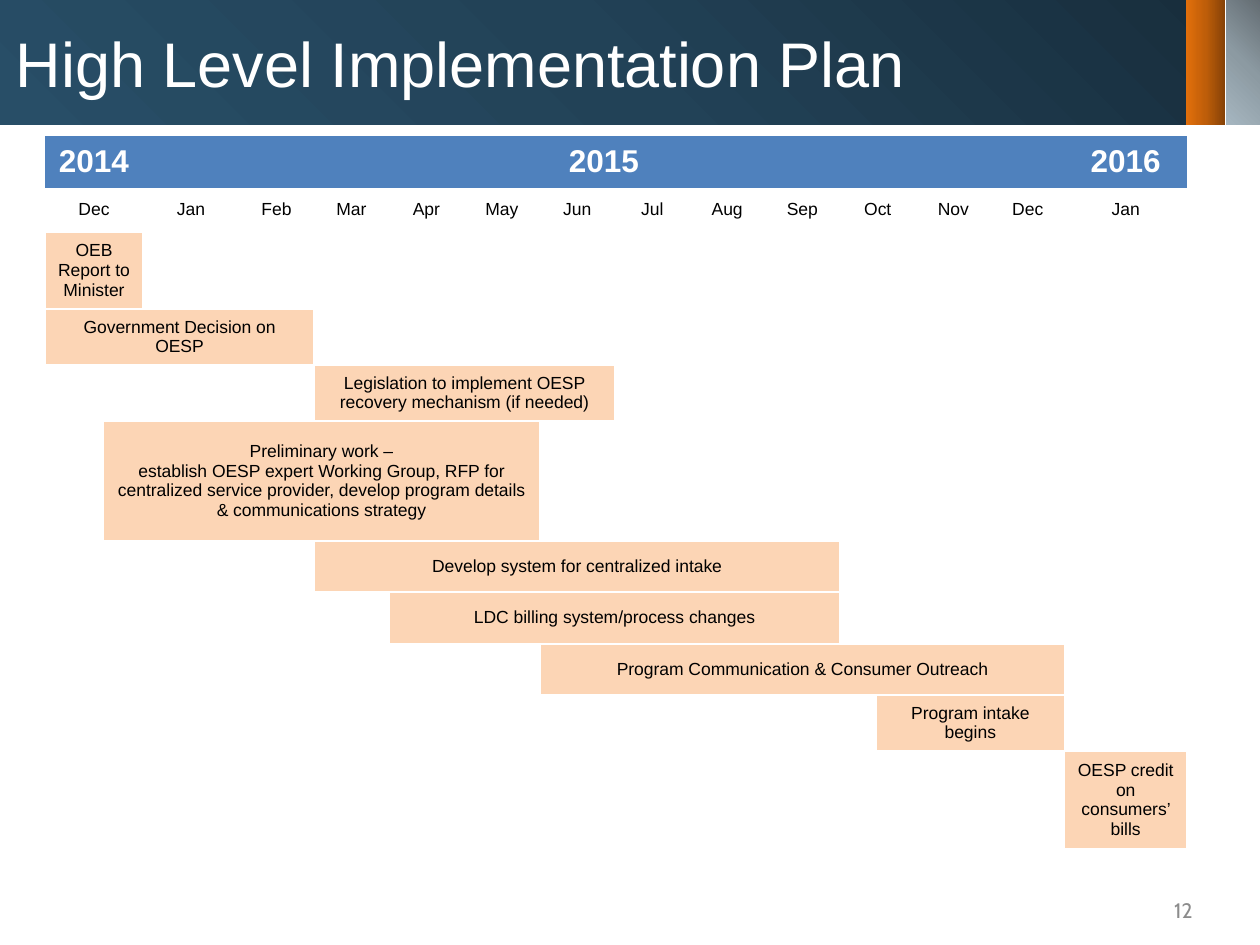
import dataclasses
import typing

import lxml.etree
import pptx
import pptx.dml.color
import pptx.enum.shapes
import pptx.enum.text
import pptx.oxml
import pptx.oxml.ns
import pptx.util

PX = 914400 / 126
ALIGN = pptx.enum.text.PP_ALIGN
MIDDLE = pptx.enum.text.MSO_ANCHOR.MIDDLE
NO_STYLE = "{2D5ABB26-0587-4C30-8999-92F81FD0307C}"
WHITE, BLACK, BLUE, PEACH, GREY = "FFFFFF", "000000", "4F81BD", "FCD5B5", "8C8C8C"

COLUMNS = [58, 40, 96, 75, 75, 75, 76, 75, 75, 75, 45, 29, 36, 40, 75, 74, 122]
ROWS = [52, 44, 77, 56, 56, 120, 51, 52, 51, 56, 98]

TITLE_FORMAT = {"size": pptx.util.Pt(36), "name": "Arial"}
YEAR_FORMAT = {"size": pptx.util.Pt(18), "name": "Arial", "bold": True}
LABEL_FORMAT = {"size": pptx.util.Pt(10), "name": "Arial", "bold": False}
NUMBER_FORMAT = {"size": pptx.util.Pt(12), "name": "Cabin"}


@dataclasses.dataclass
class Band:
    box: tuple[int, int, int, int]
    rotation: int
    angle: int
    colors: tuple[str, str, str]


@dataclasses.dataclass
class Entry:
    row: int
    column: int
    span: int
    text: str


BANDS = [
    Band((0, 0, 1210, 125), 0, 135, ("182E3D", "224257", "284E67")),
    Band((1143, 43, 125, 39), 90, 90, ("864207", "BF5E09", "E26F0B")),
    Band((1181, 45, 125, 35), 90, 45, ("636C72", "8C9AA2", "A6B6C0")),
]
YEARS = [Entry(0, 0, 2, "2014"), Entry(0, 2, 14, "2015"), Entry(0, 16, 1, "2016")]
MONTHS = "Dec Jan Feb Mar Apr May Jun Jul Aug Sep Oct Nov Dec Jan".split()
MONTH_SPANS = [2, 1, 1, 1, 1, 1, 1, 1, 1, 2, 2, 1, 1, 1]
TASKS = [
    Entry(2, 0, 2, "OEB Report to Minister"),
    Entry(3, 0, 4, "Government Decision on OESP"),
    Entry(4, 4, 4, "Legislation to implement OESP recovery mechanism (if needed)"),
    Entry(5, 1, 6, "Preliminary work –\nestablish OESP expert Working Group, RFP for centralized "
          "service provider, develop program details & communications strategy"),
    Entry(6, 4, 8, "Develop system for centralized intake"),
    Entry(7, 5, 7, "LDC billing system/process changes"),
    Entry(8, 7, 9, "Program Communication & Consumer Outreach"),
    Entry(9, 13, 3, "Program intake begins"),
    Entry(10, 16, 1, "OESP credit on consumers’ bills"),
]


def px(length: int) -> int:
    """Turn px into EMU."""
    return round(length * PX)


def rgb(value: str) -> pptx.dml.color.RGBColor:
    """Turn a hex string into a colour."""
    return pptx.dml.color.RGBColor.from_string(value)


def write(text_frame: typing.Any, text: str, formats: dict, color: str, alignment: typing.Any) -> None:
    """Fill a text frame with formatted text."""
    text_frame.text = text
    for paragraph in text_frame.paragraphs:
        paragraph.alignment = alignment
        for run in paragraph.runs:
            for name, value in formats.items():
                setattr(run.font, name, value)
            run.font.color.rgb = rgb(color)


def add_band(slide: typing.Any, band: Band) -> None:
    """Add a rectangle with a three-stop linear gradient."""
    shape = slide.shapes.add_shape(pptx.enum.shapes.MSO_SHAPE.RECTANGLE, *map(px, band.box))
    shape.rotation = band.rotation
    shape.shadow.inherit = False
    shape.line.fill.background()
    stops = "".join(
        f'<a:gs pos="{index * 50000}"><a:srgbClr val="{color}"/></a:gs>'
        for index, color in enumerate(band.colors)
    )
    gradient = pptx.oxml.parse_xml(
        f'<a:gradFill {pptx.oxml.ns.nsdecls("a")} rotWithShape="1"><a:gsLst>{stops}</a:gsLst>'
        f'<a:lin ang="{band.angle * 60000}" scaled="0"/></a:gradFill>'
    )
    shape._element.spPr.find(pptx.oxml.ns.qn("a:prstGeom")).addnext(gradient)


def add_title(slide: typing.Any, text: str) -> None:
    """Place the title above the bands."""
    title = slide.shapes.title
    slide.shapes._spTree.append(title._element)
    box = {"left": 3, "top": 8, "width": 1183, "height": 108}
    for name, value in box.items():
        setattr(title, name, px(value))
    title.text_frame.auto_size = pptx.enum.text.MSO_AUTO_SIZE.NONE
    title.text_frame.vertical_anchor = MIDDLE
    write(title.text_frame, text, TITLE_FORMAT, WHITE, ALIGN.LEFT)


def add_borders(cell: typing.Any, sides: str) -> None:
    """Give a cell white borders on the named sides."""
    for side in sides:
        cell._tc.get_or_add_tcPr().append(pptx.oxml.parse_xml(
            f'<a:ln{side} {pptx.oxml.ns.nsdecls("a")} w="12700"><a:solidFill>'
            f'<a:srgbClr val="{WHITE}"/></a:solidFill></a:ln{side}>'
        ))


def fill_entry(table: typing.Any, entry: Entry, formats: dict, color: str, fill: str | None) -> None:
    """Merge and format the cells of one entry."""
    cell = table.cell(entry.row, entry.column)
    if entry.span > 1:
        cell.merge(table.cell(entry.row, entry.column + entry.span - 1))
    write(cell.text_frame, entry.text, formats, color, ALIGN.CENTER)
    if fill:
        cell.fill.solid()
        cell.fill.fore_color.rgb = rgb(fill)


def add_schedule(slide: typing.Any) -> None:
    """Add the schedule table."""
    frame = slide.shapes.add_table(
        len(ROWS), len(COLUMNS), px(45), px(136), px(sum(COLUMNS)), px(sum(ROWS)))
    table = frame.table
    table.first_row = table.horz_banding = False
    table._tbl.tblPr.find(pptx.oxml.ns.qn("a:tableStyleId")).text = NO_STYLE
    for column, width in zip(table.columns, COLUMNS):
        column.width = px(width)
    for index, (row, height) in enumerate(zip(table.rows, ROWS)):
        row.height = px(height)
        for cell in row.cells:
            cell.vertical_anchor = MIDDLE
            add_borders(cell, {0: "", 1: "LRB"}.get(index, "LRTB"))
            cell.fill.background()
            lxml.etree.SubElement(
                cell.text_frame.paragraphs[0]._p, pptx.oxml.ns.qn("a:endParaRPr"), sz="1000")
    months = [
        Entry(1, sum(MONTH_SPANS[:index]), span, month)
        for index, (month, span) in enumerate(zip(MONTHS, MONTH_SPANS))
    ]
    for entries, formats, color, fill in (
        (YEARS, YEAR_FORMAT, WHITE, BLUE),
        (months, LABEL_FORMAT, BLACK, None),
        (TASKS, LABEL_FORMAT, BLACK, PEACH),
    ):
        for entry in entries:
            fill_entry(table, entry, formats, color, fill)


def add_page_number(slide: typing.Any, text: str) -> None:
    """Add the page number at the lower right."""
    shape = slide.shapes.add_textbox(px(907), px(890), px(298), px(40))
    shape.text_frame.word_wrap = True
    shape.text_frame.vertical_anchor = MIDDLE
    write(shape.text_frame, text, NUMBER_FORMAT, GREY, ALIGN.RIGHT)


def main() -> None:
    """Build and save the slide."""
    presentation = pptx.Presentation()
    presentation.slide_width, presentation.slide_height = px(1260), px(945)
    slide = presentation.slides.add_slide(presentation.slide_layouts[5])
    for band in BANDS:
        add_band(slide, band)
    add_page_number(slide, "12")
    add_title(slide, "High Level Implementation Plan")
    add_schedule(slide)
    presentation.save("out.pptx")


if __name__ == "__main__":
    main()
